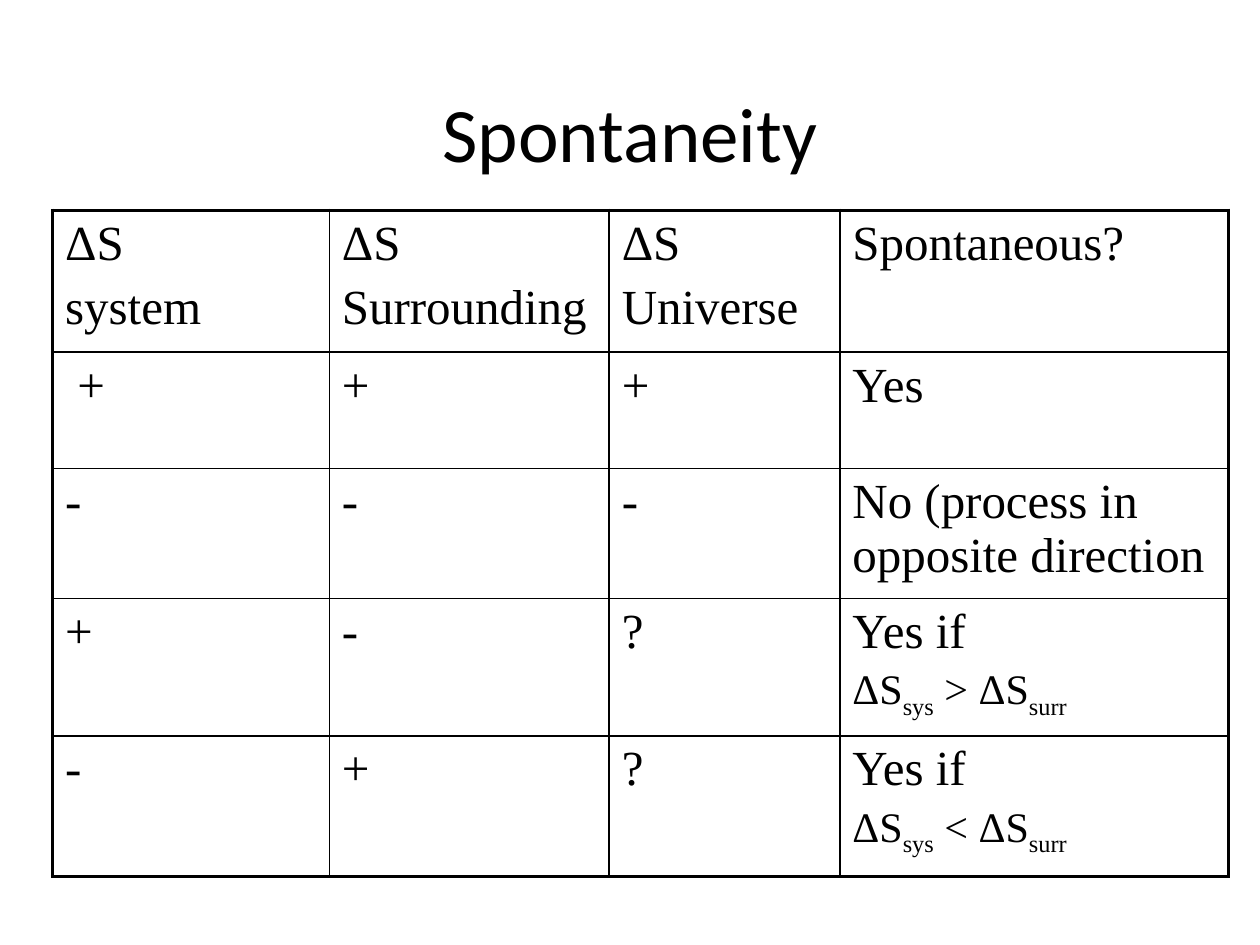
from lxml import etree
from pptx import Presentation
from pptx.dml.color import RGBColor
from pptx.enum.text import MSO_ANCHOR, PP_ALIGN
from pptx.oxml.ns import qn
from pptx.util import Cm, Pt

LEFT, CENTER = PP_ALIGN.LEFT, PP_ALIGN.CENTER
MIDDLE = MSO_ANCHOR.MIDDLE
COLORS = {"text": "000000", "border": "000000"}
THIN, THICK = Pt(1), Pt(2.25)


def write(frame, *lines, font="Times New Roman", sizes=(28,), align=LEFT):
    """Write one paragraph per line; text between bars is subscript."""
    frame.word_wrap = True
    for i, line in enumerate(lines):
        paragraph = frame.paragraphs[0] if i == 0 else frame.add_paragraph()
        paragraph.alignment = align
        size = sizes[min(i, len(sizes) - 1)]
        if i:
            paragraph.space_before = Pt(round(size * 0.2, 1))
        for j, part in enumerate(line.split("|")):
            if not part:
                continue
            run = paragraph.add_run()
            run.text = part
            run.font.name = font
            run.font.size = Pt(size)
            run.font.color.rgb = RGBColor.from_string(COLORS["text"])
            if j % 2:
                run._r.get_or_add_rPr().set("baseline", "-25000")


def add_border(cell, side, width):
    line = etree.SubElement(cell._tc.get_or_add_tcPr(), qn(f"a:ln{side}"), w=str(width))
    fill = etree.SubElement(line, qn("a:solidFill"))
    etree.SubElement(fill, qn("a:srgbClr"), val=COLORS["border"])


prs = Presentation()
prs.slide_width, prs.slide_height = Cm(25.4), Cm(19.05)
slide = prs.slides.add_slide(prs.slide_layouts[6])

# Title
title = slide.shapes.add_textbox(Cm(1.9), Cm(1.06), Cm(21.6), Cm(3.18)).text_frame
title.vertical_anchor = MIDDLE
write(title, "Spontaneity", font="Calibri", sizes=(44,), align=CENTER)

# Sign combinations and their outcome
entropy_rows = [
    [("ΔS", "system"), ("ΔS", "Surrounding"), ("ΔS", "Universe"), ("Spontaneous?",)],
    [(" +",), ("+",), ("+",), ("Yes",)],
    [("-",), ("-",), ("-",), ("No (process in opposite direction",)],
    [("+",), ("-",), ("?",), ("Yes if", "ΔS|sys| > ΔS|surr|")],
    [("-",), ("+",), ("?",), ("Yes if", "ΔS|sys| < ΔS|surr|")],
]
column_widths = [5.58, 5.64, 4.65, 7.83]
row_heights = [2.86, 2.34, 2.62, 2.67, 2.84]
last_row, last_column = len(row_heights) - 1, len(column_widths) - 1

signs = slide.shapes.add_table(
    len(row_heights), len(column_widths), Cm(1.06), Cm(4.24),
    Cm(sum(column_widths)), Cm(sum(row_heights))).table
signs.first_row = signs.horz_banding = False
for column, width in zip(signs.columns, column_widths):
    column.width = Cm(width)
for row, height in zip(signs.rows, row_heights):
    row.height = Cm(height)

for r, entries in enumerate(entropy_rows):
    for c, lines in enumerate(entries):
        cell = signs.cell(r, c)
        # Conditions below "Yes if" are smaller than the header lines
        write(cell.text_frame, *lines, sizes=(28,) if r == 0 else (28, 24))
        # Thick outer frame, thin inner grid
        outer = {"L": c == 0, "R": c == last_column, "T": r == 0, "B": r == last_row}
        for side, is_outer in outer.items():
            add_border(cell, side, THICK if is_outer else THIN)
        cell.fill.background()

prs.save("out.pptx")
